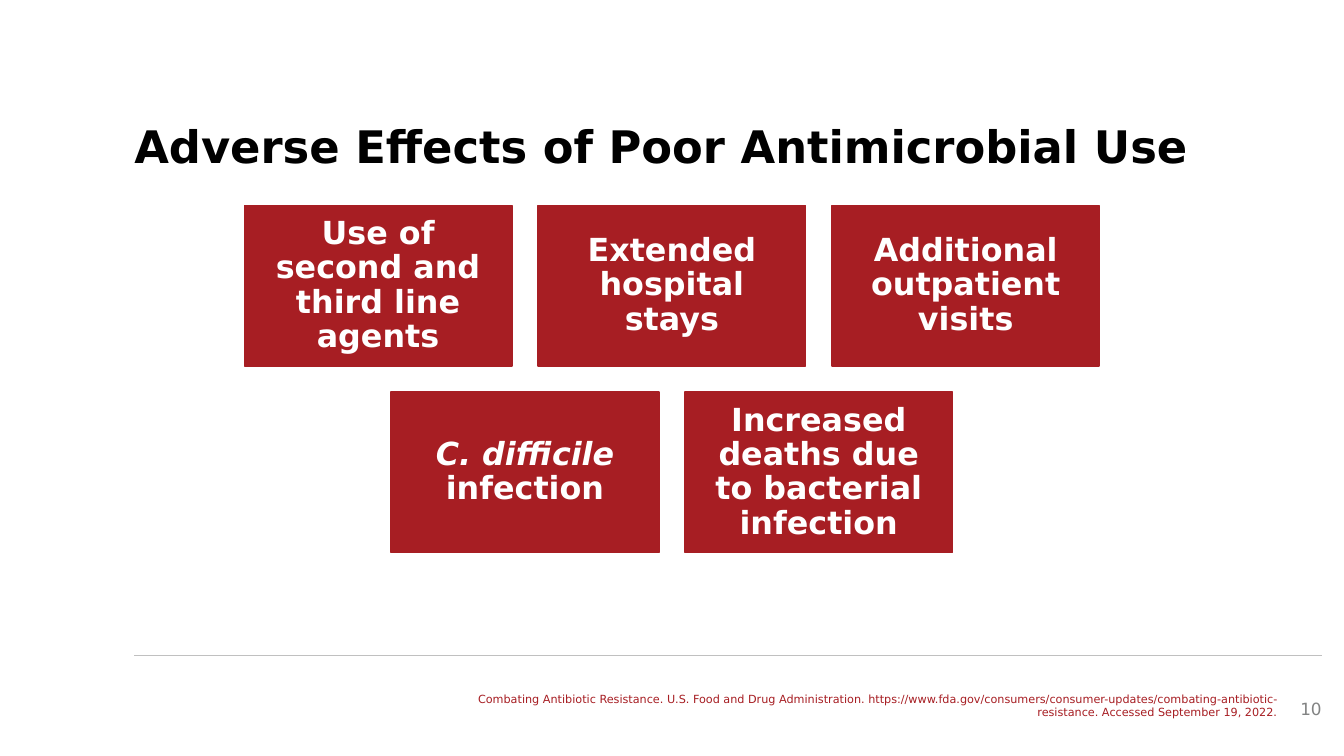
from pptx import Presentation
from pptx.dml.color import RGBColor
from pptx.enum.shapes import MSO_CONNECTOR, MSO_SHAPE
from pptx.enum.text import MSO_ANCHOR, PP_ALIGN
from pptx.util import Pt

RECT = MSO_SHAPE.RECTANGLE
STRAIGHT = MSO_CONNECTOR.STRAIGHT
TOP, MIDDLE = MSO_ANCHOR.TOP, MSO_ANCHOR.MIDDLE
LEFT, CENTER, RIGHT = PP_ALIGN.LEFT, PP_ALIGN.CENTER, PP_ALIGN.RIGHT

RED = RGBColor(0xA7, 0x1E, 0x23)
BLACK = RGBColor(0, 0, 0)
WHITE = RGBColor(0xFF, 0xFF, 0xFF)
GRAY = RGBColor(0x82, 0x83, 0x83)
SILVER = RGBColor(0xC0, 0xC0, 0xC0)

WIDTH, HEIGHT = 720, 405
CARD_W, CARD_H, GAP = 143.2, 85.9, 14.2
CARD_TOP = 110.1

# Each card is a list of (text, italic) runs.
ROWS = [
    [
        [("Use of second and third line agents", False)],
        [("Extended hospital stays", False)],
        [("Additional outpatient visits", False)],
    ],
    [
        [("C. difficile", True), (" infection", False)],
        [("Increased deaths due to bacterial infection", False)],
    ],
]
SOURCE = (
    "Combating Antibiotic Resistance. U.S. Food and Drug Administration. "
    "https://www.fda.gov/consumers/consumer-updates/"
    "combating-antibiotic-resistance. Accessed September 19, 2022."
)


class Deck:
    font = "DejaVu Sans"

    def __init__(self):
        self.show = Presentation()
        self.show.slide_width, self.show.slide_height = Pt(WIDTH), Pt(HEIGHT)
        self.slide = self.show.slides.add_slide(self.show.slide_layouts[6])

    def label(self, shape, runs, size, color, align, anchor=MIDDLE,
              inset=0, bold=False, space=None):
        """Fill a shape with one paragraph of (text, italic) runs."""
        frame = shape.text_frame
        form = {"word_wrap": True, "vertical_anchor": anchor}
        for side in ("left", "top", "right", "bottom"):
            form["margin_" + side] = Pt(inset)
        for name, value in form.items():
            setattr(frame, name, value)
        para = frame.paragraphs[0]
        para.alignment, para.line_spacing = align, space
        for words, italic in runs:
            run = para.add_run()
            run.text = words
            look = {"name": self.font, "size": Pt(size),
                    "bold": bold, "italic": italic}
            for name, value in look.items():
                setattr(run.font, name, value)
            run.font.color.rgb = color

    def text(self, x, y, w, h, words, size, color, align, **style):
        box = self.slide.shapes.add_textbox(Pt(x), Pt(y), Pt(w), Pt(h))
        self.label(box, [(words, False)], size, color, align, **style)

    def card(self, x, y, runs):
        box = self.slide.shapes.add_shape(
            RECT, Pt(x), Pt(y), Pt(CARD_W), Pt(CARD_H))
        box.shadow.inherit = False
        box.fill.solid()
        box.fill.fore_color.rgb = RED
        box.line.color.rgb = RED
        box.line.width = Pt(1)
        self.label(box, runs, 17, WHITE, CENTER, inset=5, bold=True, space=0.9)

    def rule(self, x, y, end):
        line = self.slide.shapes.add_connector(
            STRAIGHT, Pt(x), Pt(y), Pt(end), Pt(y))
        line.line.color.rgb = SILVER
        line.line.width = Pt(1)
        props = line._element.spPr
        props.append(props.makeelement(
            "{http://schemas.openxmlformats.org/drawingml/2006/main}effectLst"))


def main():
    deck = Deck()
    deck.rule(72, 351.2, 708)
    deck.text(690, 369, 18, 21.6, "10", 9, GRAY, RIGHT)
    deck.text(252, 367.2, 432, 21.6, SOURCE, 6, RED, RIGHT)
    deck.text(72, 59.6, 612, 47, "Adverse Effects of Poor Antimicrobial Use",
              24, BLACK, LEFT, anchor=TOP, bold=True, space=Pt(33))
    for i, row in enumerate(ROWS):
        span = len(row) * (CARD_W + GAP) - GAP
        for j, runs in enumerate(row):
            deck.card((WIDTH - span) / 2 + j * (CARD_W + GAP),
                      CARD_TOP + i * (CARD_H + GAP), runs)
    deck.show.save("out.pptx")


if __name__ == "__main__":
    main()
